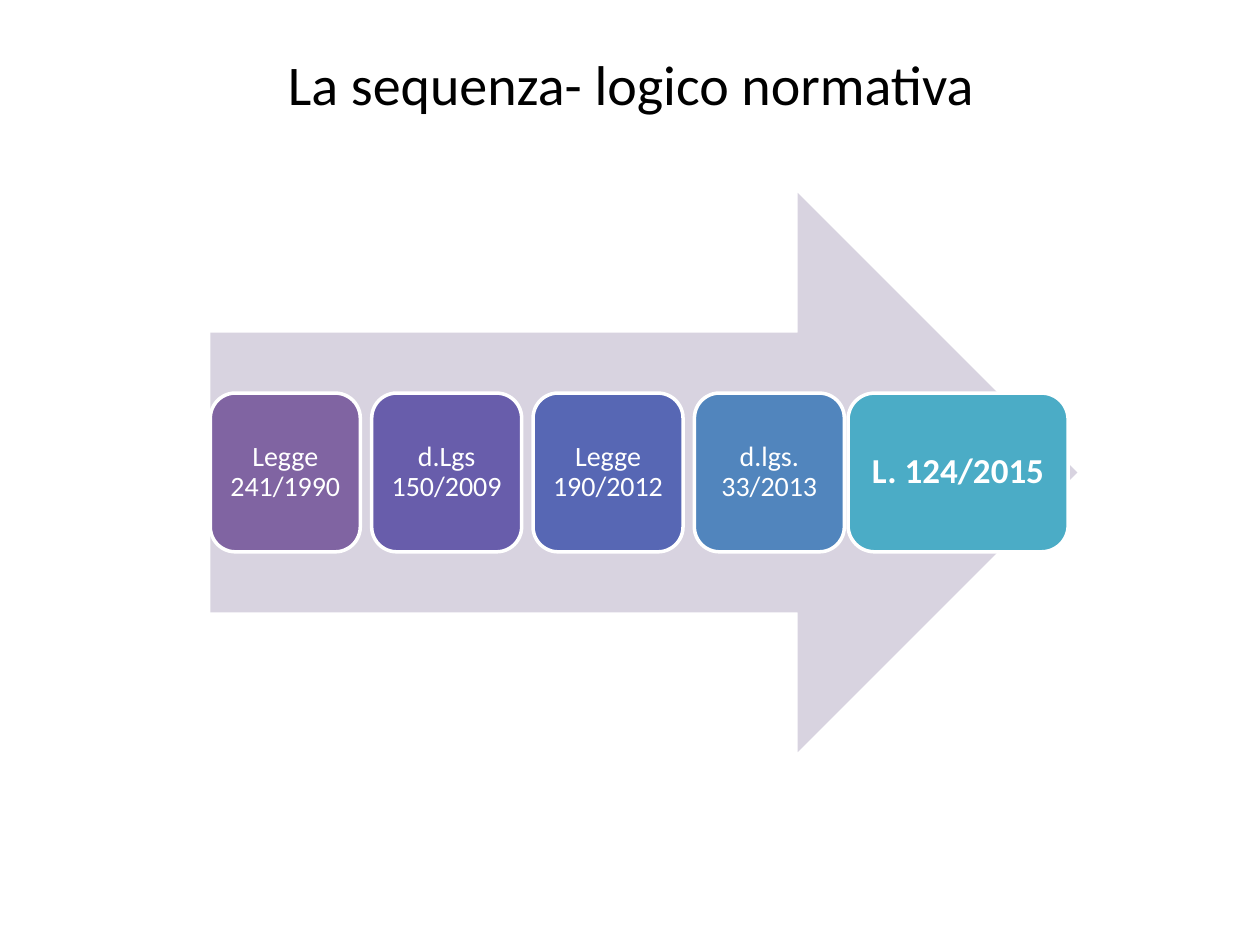
from pptx import Presentation
from pptx.dml.color import RGBColor as RGB
from pptx.enum.shapes import MSO_SHAPE as Kind
from pptx.enum.text import MSO_ANCHOR as Anchor, PP_ALIGN as Align
from pptx.util import Pt

# Content: text and fill of each law, in order
TITLE = "La sequenza- logico normativa"
LAWS = [
    ("Legge 241/1990", "8064A2"),
    ("d.Lgs 150/2009", "685DAB"),
    ("Legge 190/2012", "5767B4"),
    ("d.lgs. 33/2013", "5185BD"),
]
LAST = ("L. 124/2015", "4BACC6")

THEME = dict(font="Calibri", ink="000000", white="FFFFFF", arrow="D8D3E0",
             title=32, law=16, last=20)

# Layout in points
LEFT, MID = 120.2, 270
WIDE, HIGH, STEP = 85.7, 90.7, 92.2
LAST_LEFT, LAST_WIDE = 484.6, 125.8
ARROW_WIDE, ARROW_HIGH = 495.4, 319.6


def put_text(shape, text, size, color, bold=False, pad=5, lead=0.9):
    frame = shape.text_frame
    frame.word_wrap = True
    frame.vertical_anchor = Anchor.MIDDLE
    frame.margin_left = frame.margin_right = Pt(pad)
    frame.margin_top = frame.margin_bottom = Pt(pad)
    para = frame.paragraphs[0]
    para.alignment = Align.CENTER
    para.line_spacing = lead
    run = para.add_run()
    run.text = text
    font = run.font
    font.name, font.size, font.bold = THEME["font"], Pt(size), bold
    font.color.rgb = RGB.from_string(color)


def add_block(slide, kind, left, wide, high, fill, edge=None):
    """Add a filled shape centred on the row's middle line."""
    shape = slide.shapes.add_shape(
        kind, Pt(left), Pt(MID - high / 2), Pt(wide), Pt(high))
    shape.shadow.inherit = False
    shape.fill.solid()
    shape.fill.fore_color.rgb = RGB.from_string(fill)
    if edge:
        shape.line.color.rgb = RGB.from_string(edge)
        shape.line.width = Pt(2)
    else:
        shape.line.fill.background()
    return shape


def add_law(slide, law, left, wide, size, **style):
    text, fill = law
    box = add_block(slide, Kind.ROUNDED_RECTANGLE, left, wide, HIGH, fill,
                    edge=THEME["white"])
    put_text(box, text, size, THEME["white"], **style)


def main():
    deck = Presentation()
    deck.slide_width, deck.slide_height = Pt(720), Pt(540)
    slide = deck.slides.add_slide(deck.slide_layouts[6])

    # Title
    head = slide.shapes.add_textbox(Pt(36.7), Pt(2.2), Pt(648), Pt(90))
    put_text(head, TITLE, THEME["title"], THEME["ink"], lead=1)

    # Arrow behind the laws
    add_block(slide, Kind.RIGHT_ARROW, LEFT, ARROW_WIDE, ARROW_HIGH,
              THEME["arrow"])

    # Row of laws, the last one wider
    for i, law in enumerate(LAWS):
        add_law(slide, law, LEFT + i * STEP, WIDE, THEME["law"])
    add_law(slide, LAST, LAST_LEFT, LAST_WIDE, THEME["last"], bold=True, pad=6)

    deck.save("out.pptx")


if __name__ == "__main__":
    main()
